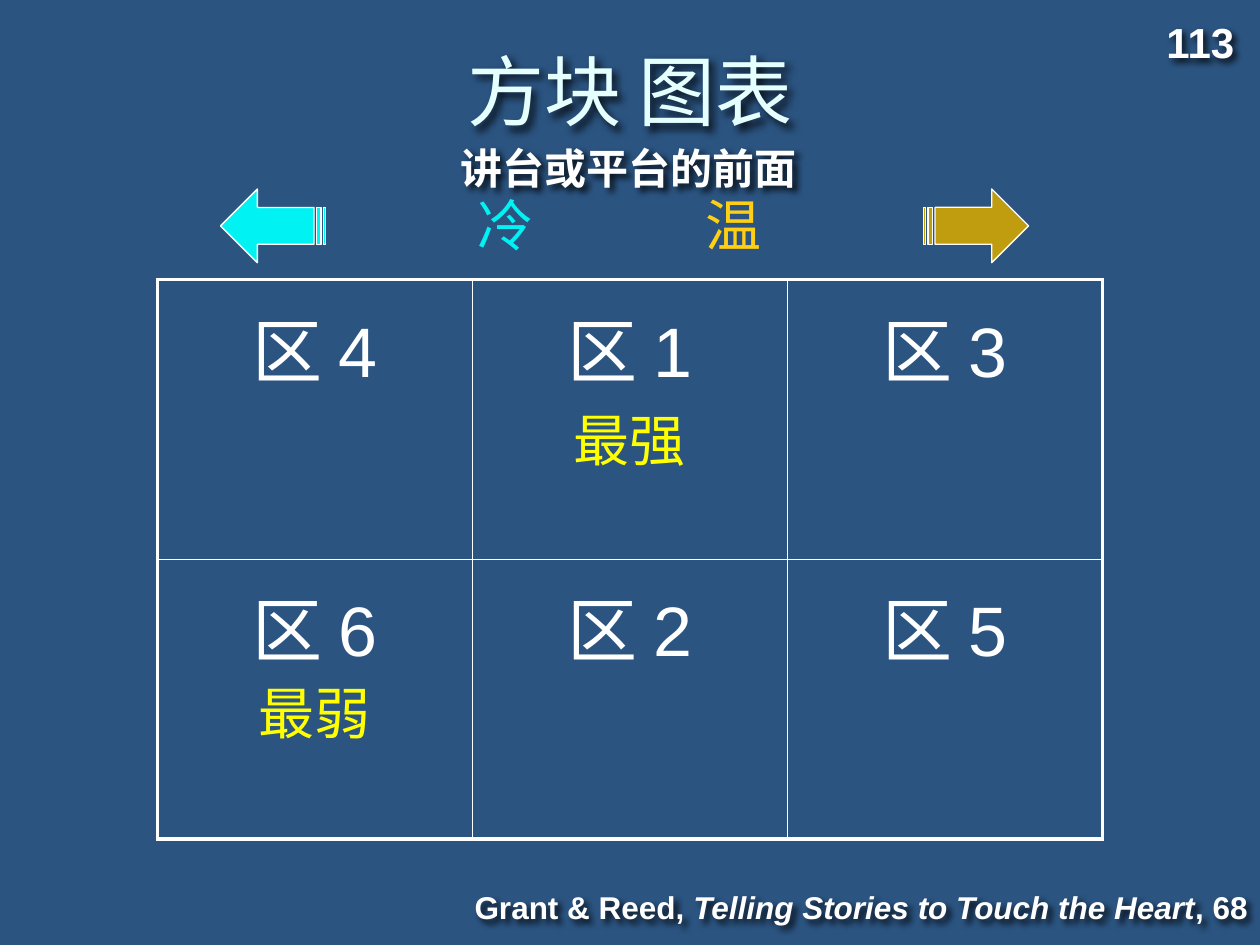
from pptx import Presentation
from pptx.dml.color import RGBColor
from pptx.enum.shapes import MSO_SHAPE
from pptx.enum.text import MSO_ANCHOR, PP_ALIGN
from pptx.oxml.ns import qn
from pptx.util import Inches, Pt
from lxml.etree import SubElement

LEFT, MID, RIGHT = PP_ALIGN.LEFT, PP_ALIGN.CENTER, PP_ALIGN.RIGHT
TOP, CENTER = MSO_ANCHOR.TOP, MSO_ANCHOR.MIDDLE
ARROW = MSO_SHAPE.STRIPED_RIGHT_ARROW

THEME = {
    "font": "Arial",
    "back": "2B5481", "white": "FFFFFF", "pale": "E5FFFF", "yellow": "FFFF00",
    "warm": "FFCF15", "gold": "C09C0F", "cold": "00F2F2", "dark": "000000",
    "title": 44, "cell": 40, "label": 32, "sub": 24, "note": 18,
    "thick": 2.25, "thin": 1, "edge": 0.75,
}

ZONES = [["区 4", "区 1", "区 3"], ["区 6", "区 2", "区 5"]]
GRID = (1 / 8, 0.296, 3 / 4, 0.592)

HEADS = [
    ([("方块 图表", False)], (0, 0.023, 1, 0.144), "title", "pale", MID, CENTER, False),
    ([("讲台或平台的前面", False)], (0.256, 0.144, 0.485, 0.068), "sub", "white", MID, TOP, True),
    ([("113", False)], (0.916, 0.011, 0.076, 0.067), "sub", "white", LEFT, TOP, True),
    ([("Grant & Reed, ", False), ("Telling Stories to Touch the Heart", True), (", 68", False)],
     (0.233, 0.933, 0.767, 0.053), "note", "white", RIGHT, TOP, True),
]
LABELS = [
    ("最强", (3 / 8, 0.423, 1 / 4, 0.157), "yellow", MID),
    ("最弱", (1 / 8, 0.711, 1 / 4, 0.085), "yellow", MID),
    ("温", (0.55, 0.195, 0.208, 0.085), "warm", LEFT),
    ("冷", (0.25, 0.195, 0.183, 0.085), "cold", RIGHT),
]
ARROWS = [(0.733, "gold", 0), (0.175, "cold", 180)]


def color(name):
    return RGBColor.from_string(THEME[name])


def place(box):
    x, y, w, h = box
    return (int(x * deck.slide_width), int(y * deck.slide_height),
            int(w * deck.slide_width), int(h * deck.slide_height))


def style(par, size, tint, align, bold=False):
    par.alignment = align
    font = par.font
    font.name, font.size, font.bold = THEME["font"], Pt(THEME[size]), bold
    font.color.rgb = color(tint)


def write(runs, box, size, tint, align, anchor=TOP, bold=False):
    shape = slide.shapes.add_textbox(*place(box))
    frame = shape.text_frame
    frame.word_wrap = True
    frame.vertical_anchor = anchor
    par = frame.paragraphs[0]
    for text, slant in runs:
        run = par.add_run()
        run.text = text
        if slant:
            run.font.italic = True
    style(par, size, tint, align, bold)
    return shape


def shade(shape):
    effects = SubElement(shape._element.spPr, qn("a:effectLst"))
    glow = SubElement(effects, qn("a:outerShdw"), blurRad=str(Pt(4)),
                      dist=str(Pt(3)), dir="2700000", algn="tl", rotWithShape="0")
    tint = SubElement(glow, qn("a:srgbClr"), val=THEME["dark"])
    SubElement(tint, qn("a:alpha"), val="80000")


def border(cell, outer):
    props = cell._tc.get_or_add_tcPr()
    for side, out in zip("LRTB", outer):
        width = Pt(THEME["thick" if out else "thin"])
        line = SubElement(props, qn("a:ln" + side), w=str(width))
        fill = SubElement(line, qn("a:solidFill"))
        SubElement(fill, qn("a:srgbClr"), val=THEME["white"])


def draw_grid():
    rows, cols = len(ZONES), len(ZONES[0])
    table = slide.shapes.add_table(rows, cols, *place(GRID)).table
    table.first_row = table.horz_banding = False
    for r, names in enumerate(ZONES):
        for c, name in enumerate(names):
            cell = table.cell(r, c)
            cell.text = name
            cell.margin_top = Inches(0.13)
            style(cell.text_frame.paragraphs[0], "cell", "white", MID)
            border(cell, (c == 0, c == cols - 1, r == 0, r == rows - 1))
            cell.fill.background()


def draw_arrow(x, tint, turn):
    arrow = slide.shapes.add_shape(ARROW, *place((x, 0.2, 1 / 12, 0.078)))
    arrow.rotation = turn
    arrow.shadow.inherit = False
    arrow.fill.solid()
    arrow.fill.fore_color.rgb = color(tint)
    arrow.line.color.rgb = color("white")
    arrow.line.width = Pt(THEME["edge"])


deck = Presentation()
deck.slide_width, deck.slide_height = Inches(10), Inches(7.5)
slide = deck.slides.add_slide(deck.slide_layouts[6])
slide.background.fill.solid()
slide.background.fill.fore_color.rgb = color("back")

draw_grid()
for head in HEADS:
    shade(write(*head))
for text, box, tint, align in LABELS:
    write([(text, False)], box, "label", tint, align)
for arrow in ARROWS:
    draw_arrow(*arrow)

deck.save("out.pptx")
